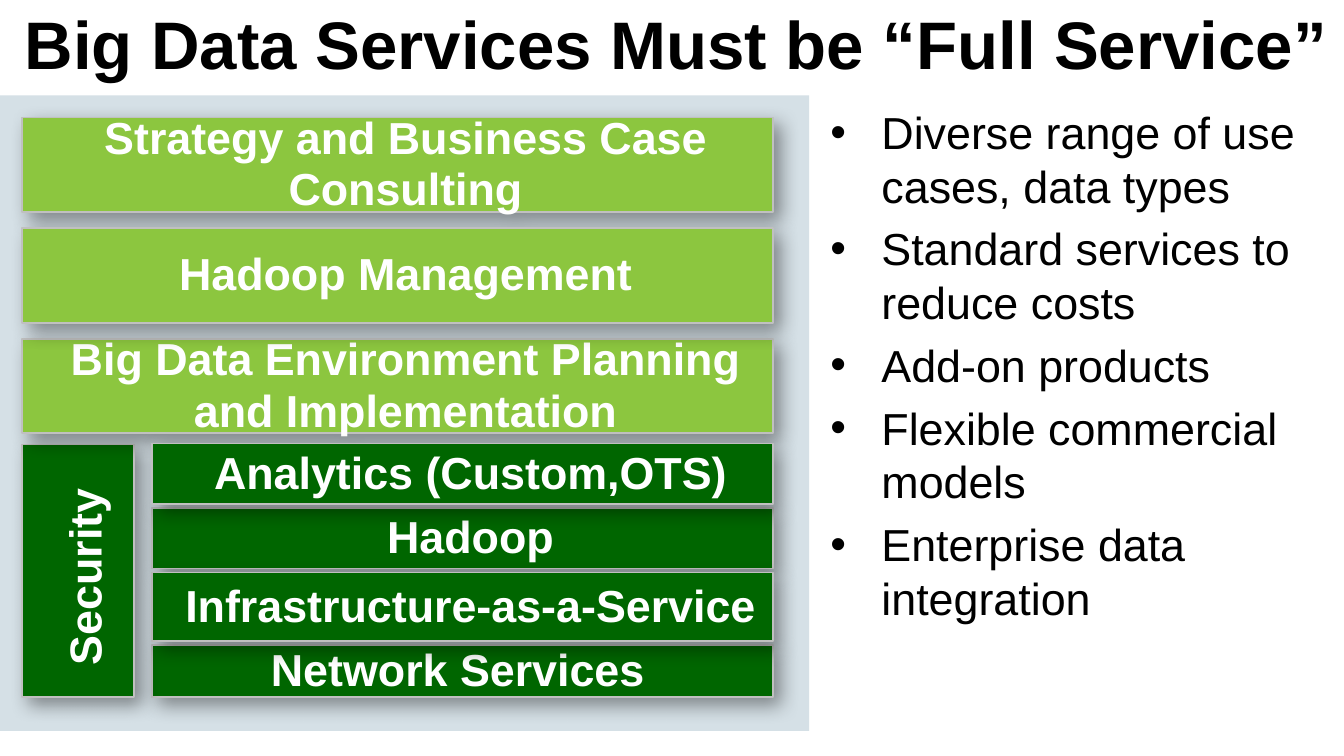
from dataclasses import dataclass

from lxml import etree
from pptx import Presentation
from pptx.dml.color import RGBColor
from pptx.enum.shapes import MSO_SHAPE
from pptx.enum.text import MSO_ANCHOR, PP_ALIGN
from pptx.oxml.ns import qn
from pptx.util import Emu, Inches, Pt

RECT = MSO_SHAPE.RECTANGLE
MIDDLE, TOP = MSO_ANCHOR.MIDDLE, MSO_ANCHOR.TOP
CENTER, LEFT = PP_ALIGN.CENTER, PP_ALIGN.LEFT


@dataclass(frozen=True)
class Theme:
    font: str = "Arial"
    title: int = 36
    body: int = 24
    ink: str = "000000"
    light: str = "FFFFFF"
    panel: str = "D5E0E6"
    service: str = "8CC63F"
    platform: str = "006600"
    border: str = "C0C0C0"


@dataclass(frozen=True)
class Area:
    x: float
    y: float
    w: float
    h: float


@dataclass(frozen=True)
class Band:
    text: str
    height: float
    z: int
    right: float = 0


T = Theme()
W = Inches(10)
H = Emu(W * 9 // 16)
PANEL = Area(0, 12.62, 60.2, 84.09)
TITLE = Area(0.85, 0, 99.15, 11.2)
BODY = Area(60.8, 12.98, 37.5, 71.29)
SECURITY = Area(1.65, 58.8, 8.35, 33.42)
SERVICES = [
    Band("Strategy and Business Case Consulting", 12.5, 2),
    Band("Hadoop Management", 12.62, 6),
    Band("Big Data Environment Planning and Implementation", 12.5, 5),
]
PLATFORM = [
    Band("Analytics (Custom,OTS)", 8, 7),
    Band("Hadoop", 8, 0),
    Band("Infrastructure-as-a-Service", 9.07, 3),
    Band("Network Services", 6.93, 1, right=0.19),
]
POINTS = [
    "Diverse range of use cases, data types",
    "Standard services to reduce costs",
    "Add-on products",
    "Flexible commercial models",
    "Enterprise data integration",
]


def place(a: Area) -> tuple[Emu, Emu, Emu, Emu]:
    return (Emu(round(W * a.x / 100)), Emu(round(H * a.y / 100)),
            Emu(round(W * a.w / 100)), Emu(round(H * a.h / 100)))


def write(sp, lines: list[str], *, size: int = T.body, color: str = T.ink,
          bold: bool = False, align=LEFT, anchor=TOP, spacing: float = 1.0,
          before: float = 0, after: float = 0, bullet: str = "",
          insets: tuple = (0.1, 0.05, 0.1, 0.05)) -> None:
    tf = sp.text_frame
    tf.word_wrap = True
    tf.vertical_anchor = anchor
    tf.margin_left, tf.margin_top, tf.margin_right, tf.margin_bottom = map(Inches, insets)
    for i, line in enumerate(lines):
        p = tf.paragraphs[0] if i == 0 else tf.add_paragraph()
        p.alignment, p.line_spacing = align, spacing
        p.space_before, p.space_after = Pt(before if i else 0), Pt(after)
        if bullet:
            pPr = p._p.get_or_add_pPr()
            pPr.set("marL", str(Inches(0.38)))
            pPr.set("indent", str(-Inches(0.38)))
            etree.SubElement(pPr, qn("a:buFont"), typeface=T.font)
            etree.SubElement(pPr, qn("a:buChar"), char=bullet)
        r = p.add_run()
        r.text = line
        r.font.name, r.font.size, r.font.bold = T.font, Pt(size), bold
        r.font.color.rgb = RGBColor.from_string(color)


def add_rect(s, a: Area, fill: str):
    sp = s.shapes.add_shape(RECT, *place(a))
    sp.shadow.inherit = False
    sp.fill.solid()
    sp.fill.fore_color.rgb = RGBColor.from_string(fill)
    sp.line.fill.background()
    return sp


def add_block(s, a: Area, text: str, fill: str, *, top: float = 0, right: float = 0):
    sp = add_rect(s, a, fill)
    sp.line.color.rgb = RGBColor.from_string(T.border)
    sp.line.width = Pt(1)
    effects = sp._element.spPr.find(qn("a:effectLst"))
    shadow = etree.SubElement(effects, qn("a:outerShdw"), blurRad=str(Pt(10)),
                              dist=str(Pt(5)), dir=str(45 * 60000),
                              algn="tl", rotWithShape="0")
    tint = etree.SubElement(shadow, qn("a:srgbClr"), val=T.ink)
    etree.SubElement(tint, qn("a:alpha"), val="40000")
    write(sp, [text], color=T.light, bold=True, align=CENTER, anchor=MIDDLE,
          spacing=0.95, after=4, insets=(0.12, top, right, 0))
    return sp


def stack(bands: list[Band], x: float, y: float, w: float, gap: float,
          fill: str) -> list[tuple[Band, Area, str]]:
    placed = []
    for band in bands:
        placed.append((band, Area(x, y, w, band.height), fill))
        y += band.height + gap
    return placed


def add_text(s, a: Area, lines: list[str], **fmt) -> None:
    write(s.shapes.add_textbox(*place(a)), lines, **fmt)


def main() -> None:
    prs = Presentation()
    prs.slide_width, prs.slide_height = W, H
    s = prs.slides.add_slide(prs.slide_layouts[6])
    add_rect(s, PANEL, T.panel)
    add_text(s, TITLE, ["Big Data Services Must be “Full Service”"],
             size=T.title, bold=True, anchor=MIDDLE)
    add_text(s, BODY, POINTS, before=4.8, bullet="•")
    blocks = stack(SERVICES, 1.65, 15.56, 55.85, 2.08, T.service)
    blocks += stack(PLATFORM, 11.3, 58.67, 46.2, 0.53, T.platform)
    blocks.append((Band("Security", SECURITY.h, 4), SECURITY, T.platform))
    for band, area, fill in sorted(blocks, key=lambda b: b[0].z):
        upright = area is SECURITY
        sp = add_block(s, area, band.text, fill, top=0.09 if upright else 0,
                       right=band.right)
        if upright:
            sp.text_frame._txBody.bodyPr.set("vert", "vert270")
    prs.save("out.pptx")


if __name__ == "__main__":
    main()
